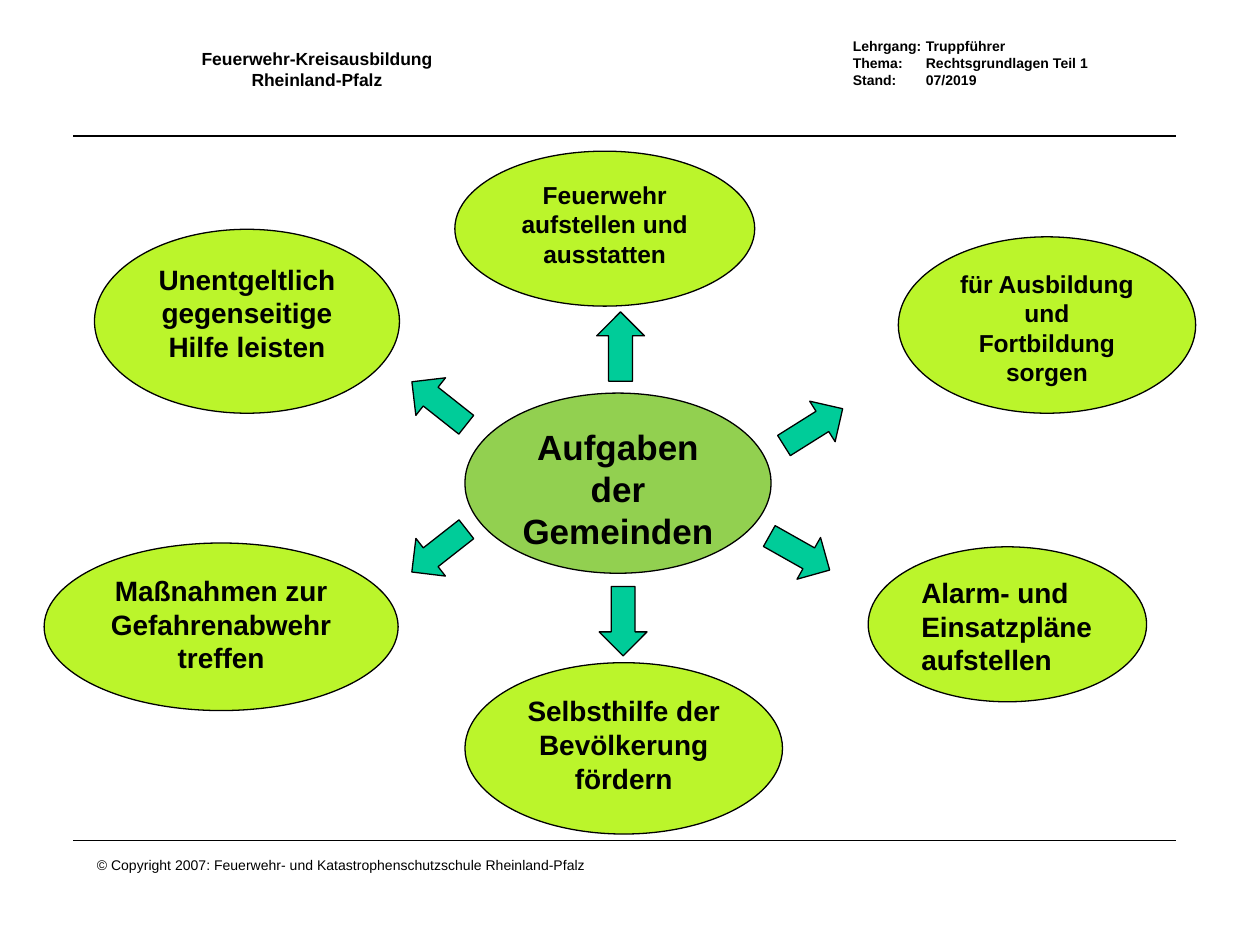
from dataclasses import dataclass

from lxml import etree
from pptx import Presentation
from pptx.dml.color import RGBColor
from pptx.enum import shapes, text
from pptx.oxml import ns
from pptx.util import Inches, Pt

COLORS = {"ink": "000000", "center": "92D050", "task": "BBF52B", "arrow": "00CC99"}
FONT = "Arial"
LEFT, CENTER = text.PP_ALIGN.LEFT, text.PP_ALIGN.CENTER


@dataclass
class Label:
    left: float
    top: float
    width: float
    height: float
    lines: list[str]
    size: float
    bold: bool = True
    align: text.PP_ALIGN = LEFT
    tab: float = 0


@dataclass
class Bubble:
    left: float
    top: float
    width: float
    height: float
    wording: str
    size: float
    color: str = "task"
    align: text.PP_ALIGN = CENTER


@dataclass
class Arrow:
    left: float
    top: float
    angle: float


ARROW_WIDTH, ARROW_HEIGHT = 0.55, 0.38
RULE_LEFT, RULE_RIGHT = 0.58, 9.33
RULE_TOPS = [1.08, 6.67]

LABELS = [
    Label(1.5, 0.33, 2.03, 0.43, ["Feuerwehr-Kreisausbildung", "Rheinland-Pfalz"],
          10, align=CENTER),
    Label(6.67, 0.25, 2.1, 0.67,
          ["Lehrgang:\tTruppführer", "Thema:\tRechtsgrundlagen Teil 1", "Stand:\t07/2019"],
          8, tab=0.58),
    Label(0.67, 6.75, 4.09, 0.23,
          ["© Copyright 2007: Feuerwehr- und Katastrophenschutzschule Rheinland-Pfalz"],
          8, bold=False),
]

BUBBLES = [
    Bubble(3.69, 3.12, 2.43, 1.43, "Aufgaben der Gemeinden", 20, "center"),
    Bubble(7.13, 1.88, 2.36, 1.4, "für Ausbildung und Fortbildung sorgen", 14),
    Bubble(0.35, 4.31, 2.81, 1.33, "Maßnahmen zur Gefahrenabwehr treffen", 16),
    Bubble(3.69, 5.26, 2.52, 1.36, "Selbsthilfe der Bevölkerung fördern", 16),
    Bubble(6.89, 4.34, 2.21, 1.23, "Alarm- und Einsatzpläne aufstellen", 16, align=LEFT),
    Bubble(0.75, 1.82, 2.42, 1.46, "Unentgeltlich gegenseitige Hilfe leisten", 16),
    Bubble(3.61, 1.2, 2.38, 1.23, "Feuerwehr aufstellen und ausstatten", 14),
]

ARROWS = [
    Arrow(6.18, 3.2, 327.9),
    Arrow(6.07, 4.2, 29.4),
    Arrow(4.67, 4.74, 90),
    Arrow(3.21, 4.18, 141.9),
    Arrow(3.21, 3.01, 218.3),
    Arrow(4.65, 2.56, 270),
]


def rgb(name: str) -> RGBColor:
    return RGBColor.from_string(COLORS[name])


def style_paragraph(paragraph, size: float, bold: bool, align: text.PP_ALIGN) -> None:
    paragraph.alignment = align
    font = paragraph.font
    font.name, font.size, font.bold = FONT, Pt(size), bold
    font.color.rgb = rgb("ink")


def style_shape(shape, color: str) -> None:
    shape.shadow.inherit = False
    shape.fill.solid()
    shape.fill.fore_color.rgb = rgb(color)
    shape.line.color.rgb = rgb("ink")
    shape.line.width = Pt(0.75)


def add_tab_stop(paragraph, position: float) -> None:
    tabs = etree.SubElement(paragraph._p.get_or_add_pPr(), ns.qn("a:tabLst"))
    etree.SubElement(tabs, ns.qn("a:tab"), pos=str(Inches(position)), algn="l")


def draw_label(slide, label: Label) -> None:
    box = slide.shapes.add_textbox(Inches(label.left), Inches(label.top),
                                   Inches(label.width), Inches(label.height))
    frame = box.text_frame
    frame.word_wrap = False
    frame.text = "\n".join(label.lines)
    for paragraph in frame.paragraphs:
        if label.tab:
            add_tab_stop(paragraph, label.tab)
        style_paragraph(paragraph, label.size, label.bold, label.align)


def draw_rule(slide, top: float) -> None:
    rule = slide.shapes.add_connector(shapes.MSO_CONNECTOR.STRAIGHT, Inches(RULE_LEFT),
                                      Inches(top), Inches(RULE_RIGHT), Inches(top))
    rule.line.color.rgb = rgb("ink")
    rule.line.width = Pt(1)
    etree.SubElement(rule._element.spPr, ns.qn("a:effectLst"))


def draw_bubble(slide, bubble: Bubble) -> None:
    ellipse = slide.shapes.add_shape(shapes.MSO_SHAPE.OVAL, Inches(bubble.left),
                                     Inches(bubble.top), Inches(bubble.width),
                                     Inches(bubble.height))
    style_shape(ellipse, bubble.color)
    frame = ellipse.text_frame
    frame.word_wrap = True
    frame.vertical_anchor = text.MSO_ANCHOR.TOP
    frame.text = bubble.wording
    style_paragraph(frame.paragraphs[0], bubble.size, True, bubble.align)


def draw_arrow(slide, arrow: Arrow) -> None:
    pointer = slide.shapes.add_shape(shapes.MSO_SHAPE.RIGHT_ARROW, Inches(arrow.left),
                                     Inches(arrow.top), Inches(ARROW_WIDTH),
                                     Inches(ARROW_HEIGHT))
    style_shape(pointer, "arrow")
    pointer.rotation = arrow.angle


def main() -> None:
    deck = Presentation()
    deck.slide_width, deck.slide_height = Inches(10), Inches(7.5)
    slide = deck.slides.add_slide(deck.slide_layouts[6])

    # Header, footer and their rules
    for label in LABELS:
        draw_label(slide, label)
    for top in RULE_TOPS:
        draw_rule(slide, top)

    # Central topic with the tasks around it
    for bubble in BUBBLES:
        draw_bubble(slide, bubble)
    for arrow in ARROWS:
        draw_arrow(slide, arrow)

    deck.save("out.pptx")


if __name__ == "__main__":
    main()
